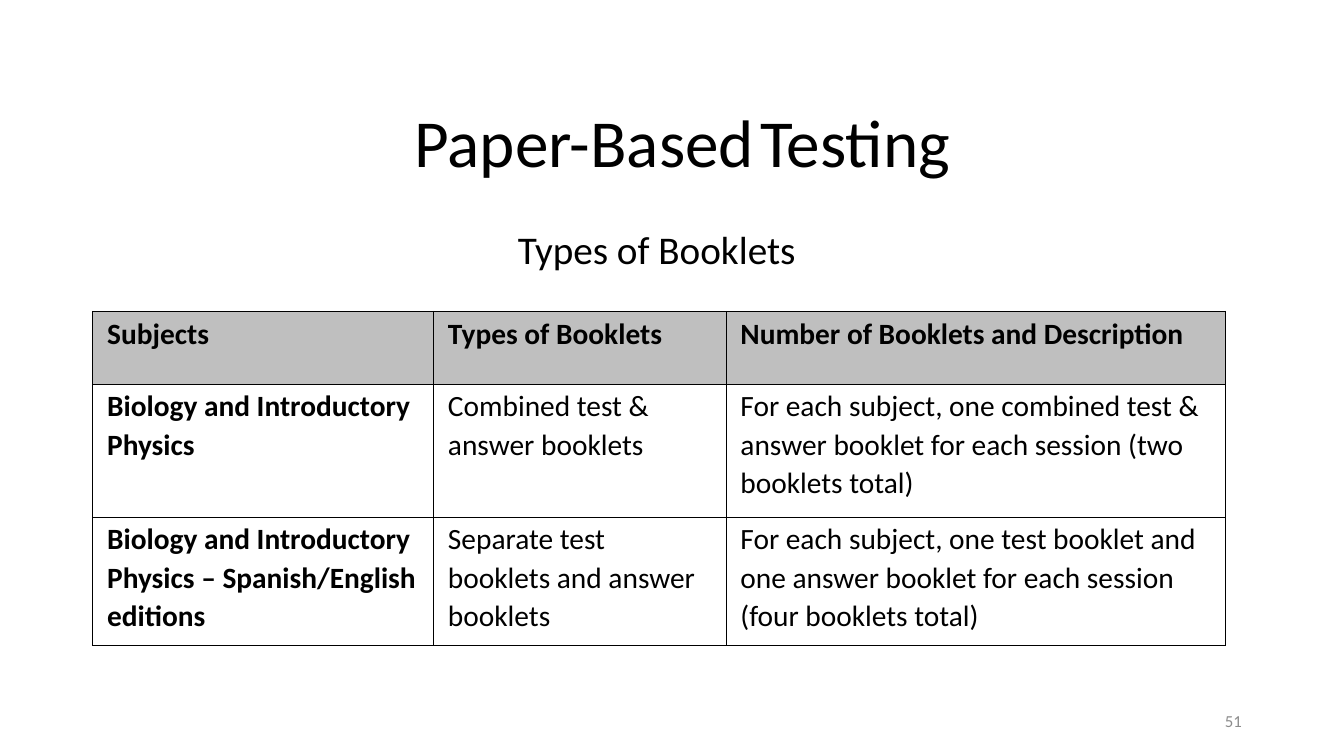
from lxml import etree
from pptx import Presentation
from pptx.dml.color import RGBColor
from pptx.enum.text import MSO_ANCHOR, PP_ALIGN
from pptx.oxml.ns import qn
from pptx.util import Cm, Pt

LEFT, RIGHT = PP_ALIGN.LEFT, PP_ALIGN.RIGHT
TOP, MIDDLE = MSO_ANCHOR.TOP, MSO_ANCHOR.MIDDLE

COLUMNS = [8.59, 7.37, 12.58]
ROWS = [
    (1.83, ["Subjects", "Types of Booklets", "Number of Booklets and Description"]),
    (3.35, ["Biology and Introductory Physics",
            "Combined test & answer booklets",
            "For each subject, one combined test & answer booklet "
            "for each session (two booklets total)"]),
    (3.23, ["Biology and Introductory Physics – Spanish/English editions",
            "Separate test booklets and answer booklets",
            "For each subject, one test booklet and one answer booklet "
            "for each session (four booklets total)"]),
]


def rgb(value):
    return RGBColor.from_string(value)


def add_run(p, text, size=21, color="000000", bold=False, font="Calibri"):
    r = p.add_run()
    r.text = text
    r.font.name = font
    r.font.size = Pt(size)
    r.font.bold = bold
    r.font.color.rgb = rgb(color)


class SlideBuilder:
    ink = "000000"
    header_fill = "BFBFBF"
    border_width = 1

    def __init__(self, prs):
        self.s = prs.slides.add_slide(prs.slide_layouts[5])

    def title(self, parts, x, y, w, h):
        sp = self.s.shapes.title
        sp.left, sp.top, sp.width, sp.height = Cm(x), Cm(y), Cm(w), Cm(h)
        tf = sp.text_frame
        tf.vertical_anchor = TOP
        p = tf.paragraphs[0]
        p.alignment = LEFT
        for text, size in parts:
            add_run(p, text, size=size, color=self.ink)

    def text(self, text, x, y, w, h, align=LEFT, anchor=TOP, wrap=True, **style):
        sp = self.s.shapes.add_textbox(Cm(x), Cm(y), Cm(w), Cm(h))
        tf = sp.text_frame
        tf.word_wrap = wrap
        tf.vertical_anchor = anchor
        p = tf.paragraphs[0]
        p.alignment = align
        add_run(p, text, **style)

    def borders(self, cell):
        tcPr = cell._tc.get_or_add_tcPr()
        for i, side in enumerate(("lnL", "lnR", "lnT", "lnB")):
            ln = etree.Element(qn(f"a:{side}"), w=str(Pt(self.border_width)))
            fill = etree.SubElement(ln, qn("a:solidFill"))
            etree.SubElement(fill, qn("a:srgbClr"), val=self.ink)
            tcPr.insert(i, ln)

    def cell(self, cell, text, header, bold):
        cell.margin_left = cell.margin_right = Cm(0.36)
        cell.margin_top, cell.margin_bottom = Cm(0.05), Cm(0)
        if header:
            cell.fill.solid()
            cell.fill.fore_color.rgb = rgb(self.header_fill)
        else:
            cell.fill.background()
        self.borders(cell)
        p = cell.text_frame.paragraphs[0]
        p.line_spacing = 1.07
        add_run(p, text, color=self.ink, bold=bold)

    def table(self, columns, rows, x, y):
        height = sum(h for h, _ in rows)
        frame = self.s.shapes.add_table(len(rows), len(columns), Cm(x), Cm(y),
                                        Cm(sum(columns)), Cm(height))
        table = frame.table
        for column, width in zip(table.columns, columns):
            column.width = Cm(width)
        for i, (h, texts) in enumerate(rows):
            table.rows[i].height = Cm(h)
            for j, text in enumerate(texts):
                self.cell(table.cell(i, j), text, header=i == 0,
                          bold=i == 0 or j == 0)


def main():
    prs = Presentation()
    prs.slide_width, prs.slide_height = Cm(33.87), Cm(19.05)
    slide = SlideBuilder(prs)
    slide.title([("Paper-Based", 48), (" ", 18), ("Testing", 48)],
                10.19, 2.39, 15.52, 2.31)
    slide.text("Types of Booklets", 12.8, 5.56, 7.59, 1.45, wrap=False, size=28)
    slide.table(COLUMNS, ROWS, 2.34, 7.85)
    slide.text("51", 23.93, 17.65, 7.62, 1.02, align=RIGHT, anchor=MIDDLE,
               size=12, color="8C8C8C")
    prs.save("out.pptx")


if __name__ == "__main__":
    main()
